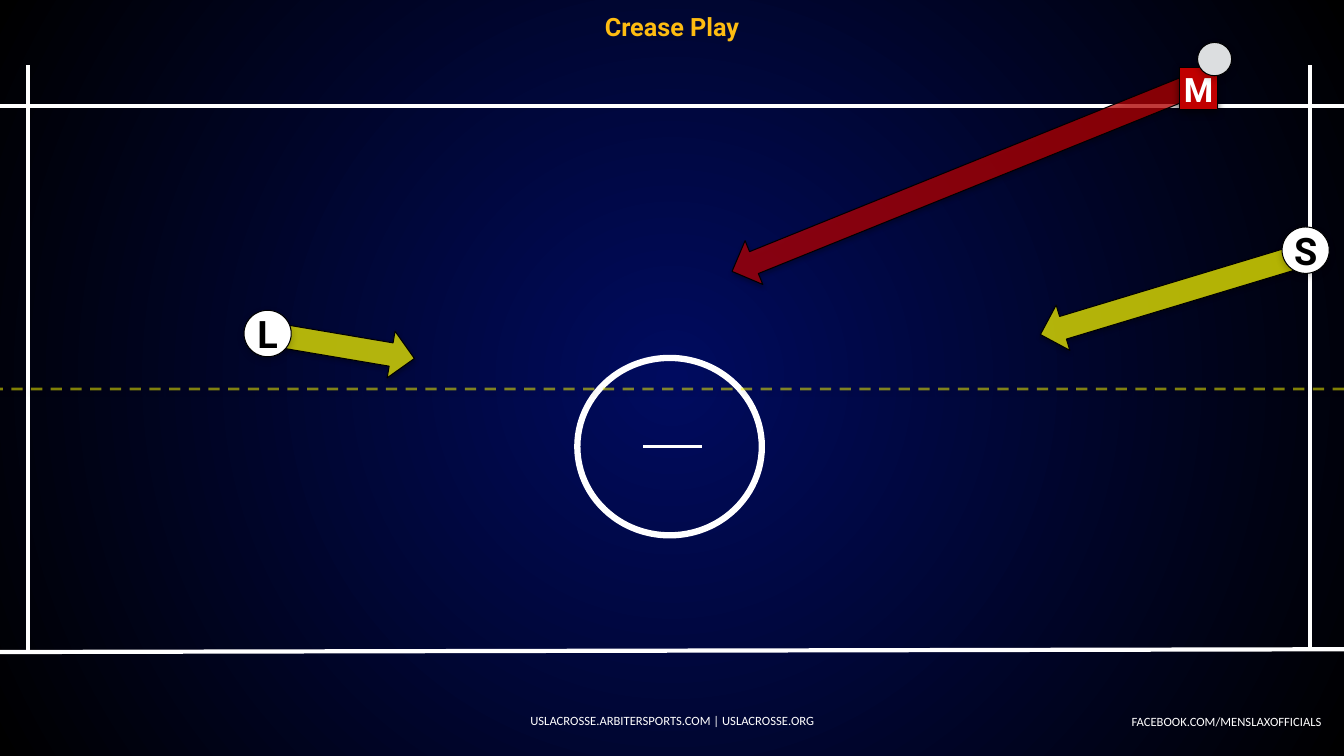
import pptx
import pptx.dml.color
import pptx.enum.dml
import pptx.enum.shapes
import pptx.enum.text
import pptx.oxml
import pptx.oxml.ns
import pptx.util

Cm, Pt = pptx.util.Cm, pptx.util.Pt
qn = pptx.oxml.ns.qn
SHAPE = pptx.enum.shapes.MSO_SHAPE
ALIGN = pptx.enum.text.PP_ALIGN
NS = pptx.oxml.ns.nsdecls("a")

WIDTH, HEIGHT = 33.87, 19.05
WHITE, BLACK, YELLOW, RED = "FFFFFF", "000000", "FFFF00", "C00000"


def color(hex_value):
    return pptx.dml.color.RGBColor.from_string(hex_value)


def write(shape, text, font="Roboto", size=18, fill=WHITE, bold=False,
          align=ALIGN.CENTER, wrap=True, inset=None):
    frame = shape.text_frame
    frame.word_wrap = wrap
    frame.vertical_anchor = pptx.enum.text.MSO_ANCHOR.MIDDLE
    if inset is not None:
        frame.margin_left = frame.margin_right = Cm(inset)
        frame.margin_top = frame.margin_bottom = Cm(inset)
    paragraph = frame.paragraphs[0]
    paragraph.alignment = align
    run = paragraph.add_run()
    run.text = text
    run.font.name, run.font.size, run.font.bold = font, Pt(size), bold
    run.font.color.rgb = color(fill)


def set_alpha(parent, percent):
    parent.find(".//" + qn("a:srgbClr")).append(
        pptx.oxml.parse_xml(f'<a:alpha {NS} val="{percent * 1000}"/>'))


def set_effects(shape, shadow=None):
    """shadow is (opacity percent, blur in points, distance in points)."""
    effects = pptx.oxml.parse_xml(f"<a:effectLst {NS}/>")
    if shadow:
        opacity, blur, distance = shadow
        effects.append(pptx.oxml.parse_xml(
            f'<a:outerShdw {NS} blurRad="{Pt(blur)}" dist="{Pt(distance)}" '
            f'dir="5400000" rotWithShape="0"><a:srgbClr val="{BLACK}">'
            f'<a:alpha val="{opacity * 1000}"/></a:srgbClr></a:outerShdw>'))
    shape.element.spPr.append(effects)


class Diagram:
    def __init__(self, slide):
        self.slide = slide
        self.shapes = slide.shapes

    def background(self, center, edge):
        fill = self.slide.background.fill
        fill.gradient()
        for stop, hex_value, position in zip(fill.gradient_stops, (center, edge), (0, 1)):
            stop.color.rgb = color(hex_value)
            stop.position = position
        gradient = self.slide.element.find(".//" + qn("a:gradFill"))
        gradient.replace(gradient.find(qn("a:lin")), pptx.oxml.parse_xml(
            f'<a:path {NS} path="circle"><a:fillToRect l="50000" t="50000" '
            'r="50000" b="50000"/></a:path>'))

    def line(self, x1, y1, x2, y2, width=3, stroke=WHITE, dashed=False, alpha=None, shadow=None):
        line = self.shapes.add_connector(
            pptx.enum.shapes.MSO_CONNECTOR.STRAIGHT, Cm(x1), Cm(y1), Cm(x2), Cm(y2))
        line.line.color.rgb = color(stroke)
        line.line.width = Pt(width)
        if dashed:
            line.line.dash_style = pptx.enum.dml.MSO_LINE.DASH
        if alpha:
            set_alpha(line.element.spPr, alpha)
        set_effects(line, shadow)
        return line

    def shape(self, kind, left, top, width, height, fill=None, stroke=BLACK,
              stroke_width=0.75, alpha=None, shadow=None, rotation=0):
        shape = self.shapes.add_shape(kind, Cm(left), Cm(top), Cm(width), Cm(height))
        shape.rotation = rotation
        if fill:
            shape.fill.solid()
            shape.fill.fore_color.rgb = color(fill)
        else:
            shape.fill.background()
        if alpha:
            set_alpha(shape.element.spPr, alpha)
        shape.line.color.rgb = color(stroke)
        shape.line.width = Pt(stroke_width)
        set_effects(shape, shadow)
        return shape

    def run_arrow(self, left, top, length, rotation, fill):
        return self.shape(SHAPE.RIGHT_ARROW, left, top, length, 1.19, fill,
                          alpha=70, shadow=(35, 3.1, 1.8), rotation=rotation)

    def official(self, letter, left, top):
        marker = self.shape(SHAPE.OVAL, left, top, 1.19, 1.17, WHITE, shadow=(20, 5, 2))
        write(marker, letter, size=27, fill=BLACK, bold=True, wrap=False, inset=0.18)

    def text(self, text, left, top, width, height, **style):
        box = self.shapes.add_textbox(Cm(left), Cm(top), Cm(width), Cm(height))
        write(box, text, **style)


def main():
    deck = pptx.Presentation()
    deck.slide_width, deck.slide_height = Cm(WIDTH), Cm(HEIGHT)
    diagram = Diagram(deck.slides.add_slide(deck.slide_layouts[6]))
    diagram.background("000B5F", BLACK)

    # Field lines and crease
    sidelines = [diagram.line(x, 16.41, x, 1.63) for x in (0.71, 33.02)]
    midline = diagram.line(0, 2.67, WIDTH, 2.67)
    end_line = diagram.line(0, 16.43, WIDTH, 16.36)
    crease = diagram.shape(SHAPE.OVAL, 14.55, 9.02, 4.65, 4.47, stroke=WHITE, stroke_width=4.5)
    goal_line = diagram.line(16.21, 11.25, 17.68, 11.25, width=2.25)
    diagram.shapes.add_group_shape([*sidelines, midline, end_line, crease, goal_line])

    # Movement of officials and attacker
    diagram.run_arrow(6.76, 8.13, 3.71, 9.6, YELLOW)
    diagram.run_arrow(26.06, 6.76, 7.44, 163.2, YELLOW)
    diagram.run_arrow(17.98, 3.84, 12.83, 158, RED)

    # Title and goal line extended
    diagram.text("Crease Play", 0, 0.13, WIDTH, 1.07, fill="FEBC11", bold=True)
    diagram.line(-0.71, 9.8, 35.59, 9.8, width=2, stroke=YELLOW, dashed=True,
                 alpha=50, shadow=(38, 3.1, 1.6))

    # Officials
    diagram.official("L", 6.15, 7.82)
    diagram.official("S", 32.31, 5.72)

    # Attacker with ball
    attacker = diagram.shape(SHAPE.RECTANGLE, 29.72, 1.7, 0.97, 1.07, RED, shadow=(50, 5, 2))
    write(attacker, "M", size=24, bold=True, wrap=False, inset=0.15)
    ball = diagram.shape(SHAPE.OVAL, 30.18, 1.07, 0.86, 0.84, "DCDEE0", shadow=(20, 5, 2))
    diagram.shapes.add_group_shape([attacker, ball])

    # Footer
    footer = {"font": "Calibri", "size": 9}
    diagram.text("USLACROSSE.ARBITERSPORTS.COM | USLACROSSE.ORG",
                 11.58, 17.65, 10.72, 1.02, **footer)
    diagram.text("FACEBOOK.COM/MENSLAXOFFICIALS", 28.17, 17.86, 5.38, 0.64,
                 align=ALIGN.RIGHT, wrap=False, **footer)

    deck.save("out.pptx")


if __name__ == "__main__":
    main()
